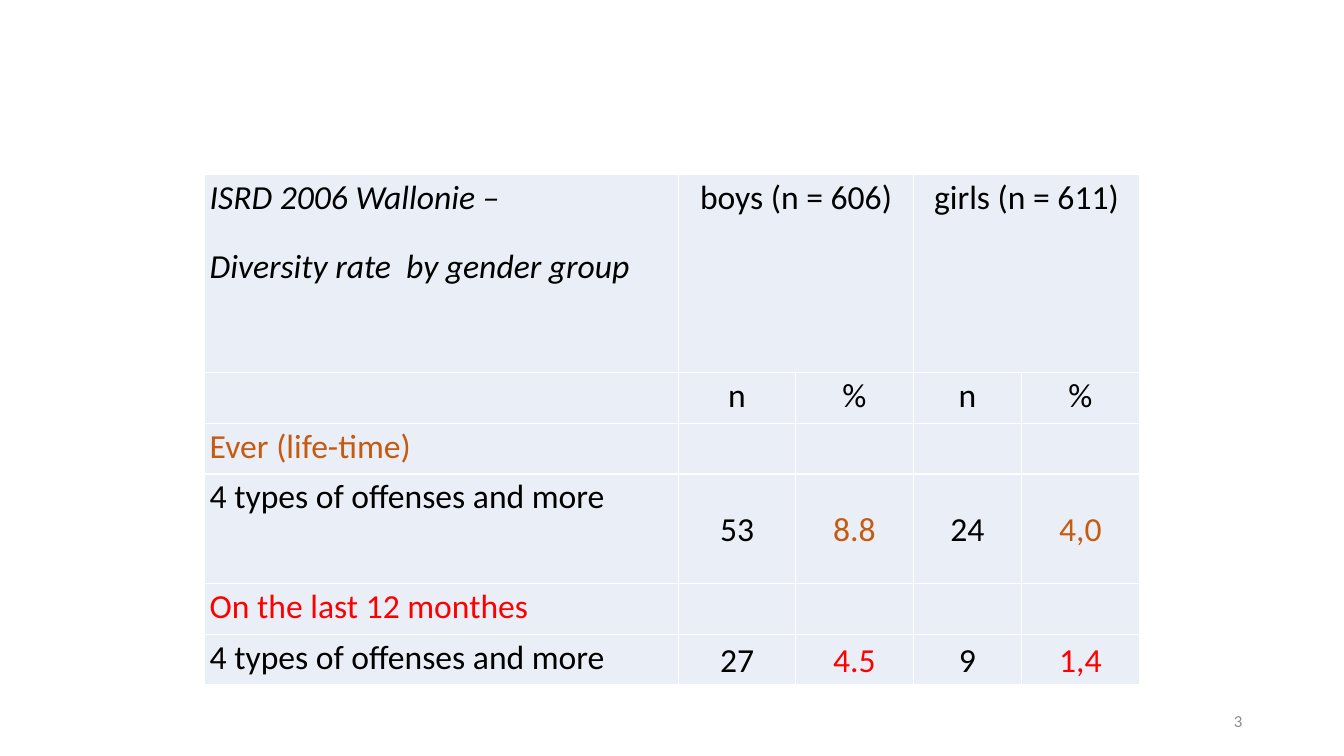
from lxml.etree import SubElement
from pptx import Presentation
from pptx.dml.color import RGBColor
from pptx.enum.text import MSO_ANCHOR, PP_ALIGN
from pptx.oxml.ns import qn
from pptx.util import Inches, Pt

HUES = {"ink": "000000", "rust": "C55A11", "red": "FF0000",
        "grey": "8C8C8C", "pale": "EAEFF7", "white": "FFFFFF"}
COLS = [35.26, 8.7, 8.78, 8.03, 8.78]
ROWS = [26.2, 6.7, 6.7, 14.5, 6.7, 6.7]
HEADS = ["n", "%", "n", "%"]
GROUPS = [
    ("Ever (life-time)", "rust", ["53", "8.8", "24", "4,0"]),
    ("On the last 12 monthes", "red", ["27", "4.5", "9", "1,4"]),
]


class Deck:
    font = "Calibri"
    size = 24

    def __init__(self):
        self.prs = Presentation()
        self.prs.slide_width = Inches(13.33)
        self.prs.slide_height = Inches(7.5)
        self.slide = self.prs.slides.add_slide(self.prs.slide_layouts[6])

    def wide(self, share):
        return int(self.prs.slide_width * share / 100)

    def high(self, share):
        return int(self.prs.slide_height * share / 100)

    def hue(self, name):
        return RGBColor.from_string(HUES[name])

    def style(self, par, hue, size, align):
        par.alignment = align
        par.font.name = self.font
        par.font.size = Pt(size)
        par.font.color.rgb = self.hue(hue)

    def table(self, left, top, cols, rows):
        frame = self.slide.shapes.add_table(
            len(rows), len(cols), self.wide(left), self.high(top),
            self.wide(sum(cols)), self.high(sum(rows)))
        grid = frame.table
        grid.first_row = grid.horz_banding = False
        for col, share in zip(grid.columns, cols):
            col.width = self.wide(share)
        for row, share in zip(grid.rows, rows):
            row.height = self.high(share)
        for cell in grid.iter_cells():
            self.frame(cell)
        return grid

    def frame(self, cell):
        cell.margin_left = cell.margin_right = Inches(0.05)
        cell.margin_top = cell.margin_bottom = 0
        for side in "LRTB":
            line = SubElement(cell._tc.get_or_add_tcPr(), qn(f"a:ln{side}"), w=str(Pt(1)))
            fill = SubElement(line, qn("a:solidFill"))
            SubElement(fill, qn("a:srgbClr"), val=HUES["white"])
        cell.fill.solid()
        cell.fill.fore_color.rgb = self.hue("pale")

    def entry(self, cell, text, hue="ink", align=PP_ALIGN.CENTER,
              gaps=(0, 3), slant=False, anchor=MSO_ANCHOR.TOP):
        cell.text = text
        cell.vertical_anchor = anchor
        for par in cell.text_frame.paragraphs:
            self.style(par, hue, self.size, align)
            par.font.italic = slant
            par.line_spacing = 1.07
            par.space_before, par.space_after = map(Pt, gaps)

    def label(self, text, left, top, width, height, hue, size):
        box = self.slide.shapes.add_textbox(
            self.wide(left), self.high(top), self.wide(width), self.high(height))
        body = box.text_frame
        body.word_wrap = True
        body.vertical_anchor = MSO_ANCHOR.MIDDLE
        body.text = text
        self.style(body.paragraphs[0], hue, size, PP_ALIGN.RIGHT)


def main():
    deck = Deck()
    grid = deck.table(15.23, 23.1, COLS, ROWS)
    deck.entry(grid.cell(0, 0),
               "ISRD 2006 Wallonie –\nDiversity rate  by gender group",
               align=PP_ALIGN.LEFT, gaps=(12, 6), slant=True)
    for col, text in [(1, "boys (n = 606)"), (3, "girls (n = 611)")]:
        grid.cell(0, col).merge(grid.cell(0, col + 1))
        deck.entry(grid.cell(0, col), text, gaps=(0, 8))
    for col, text in enumerate(HEADS, 1):
        deck.entry(grid.cell(1, col), text, gaps=(0, 8))
    for at, (title, hue, counts) in enumerate(GROUPS):
        row = 2 + 2 * at
        deck.entry(grid.cell(row, 0), title, hue, PP_ALIGN.JUSTIFY, (3, 3))
        deck.entry(grid.cell(row + 1, 0), "4 types of offenses and more",
                   align=PP_ALIGN.JUSTIFY)
        for col, text in enumerate(counts, 1):
            deck.entry(grid.cell(row + 1, col), text,
                       "ink" if col % 2 else hue,
                       gaps=(0, 3 if col < 3 else 8), anchor=MSO_ANCHOR.MIDDLE)
    deck.label("3", 70.67, 92.67, 22.5, 5.33, "grey", 12)
    deck.prs.save("out.pptx")


if __name__ == "__main__":
    main()
